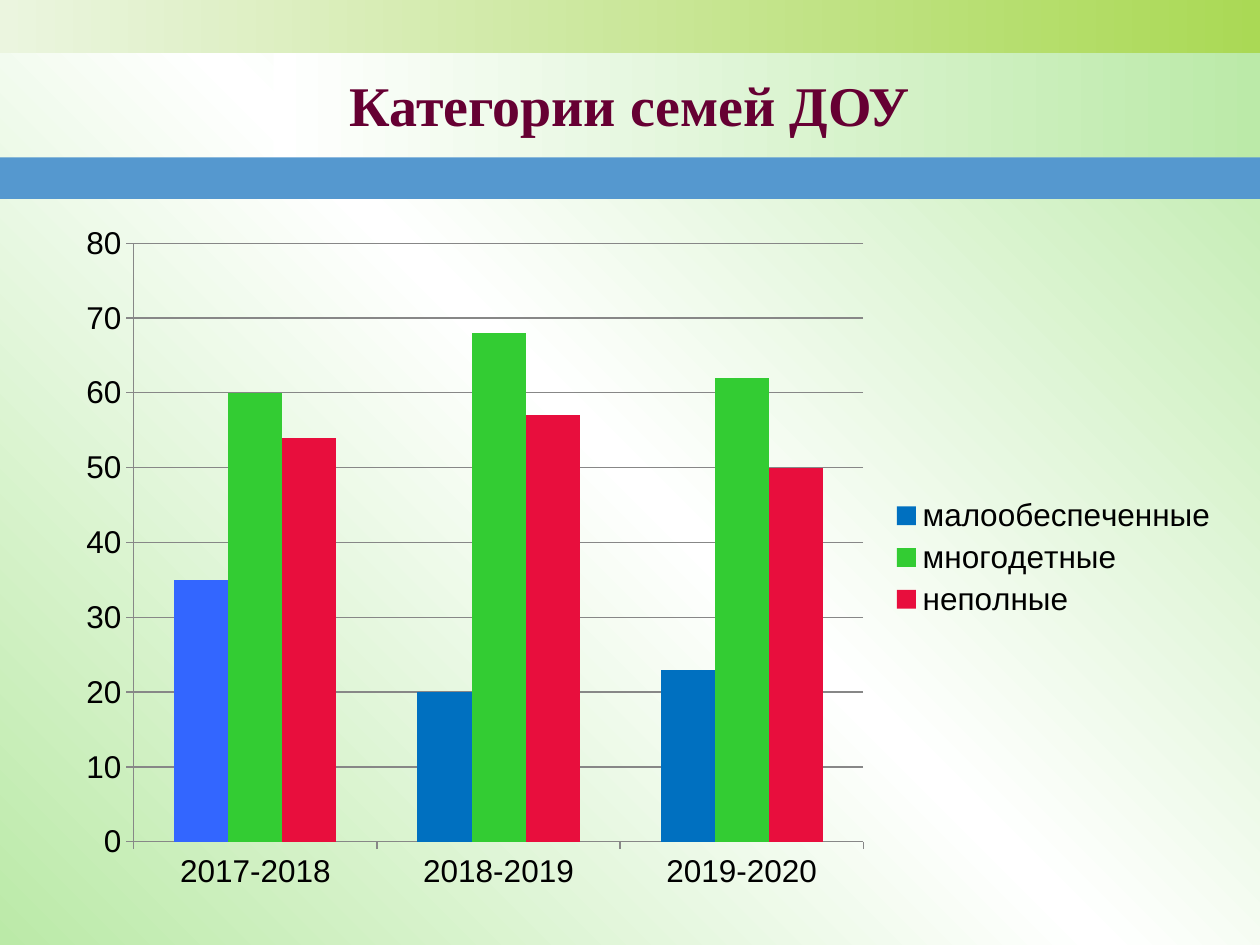
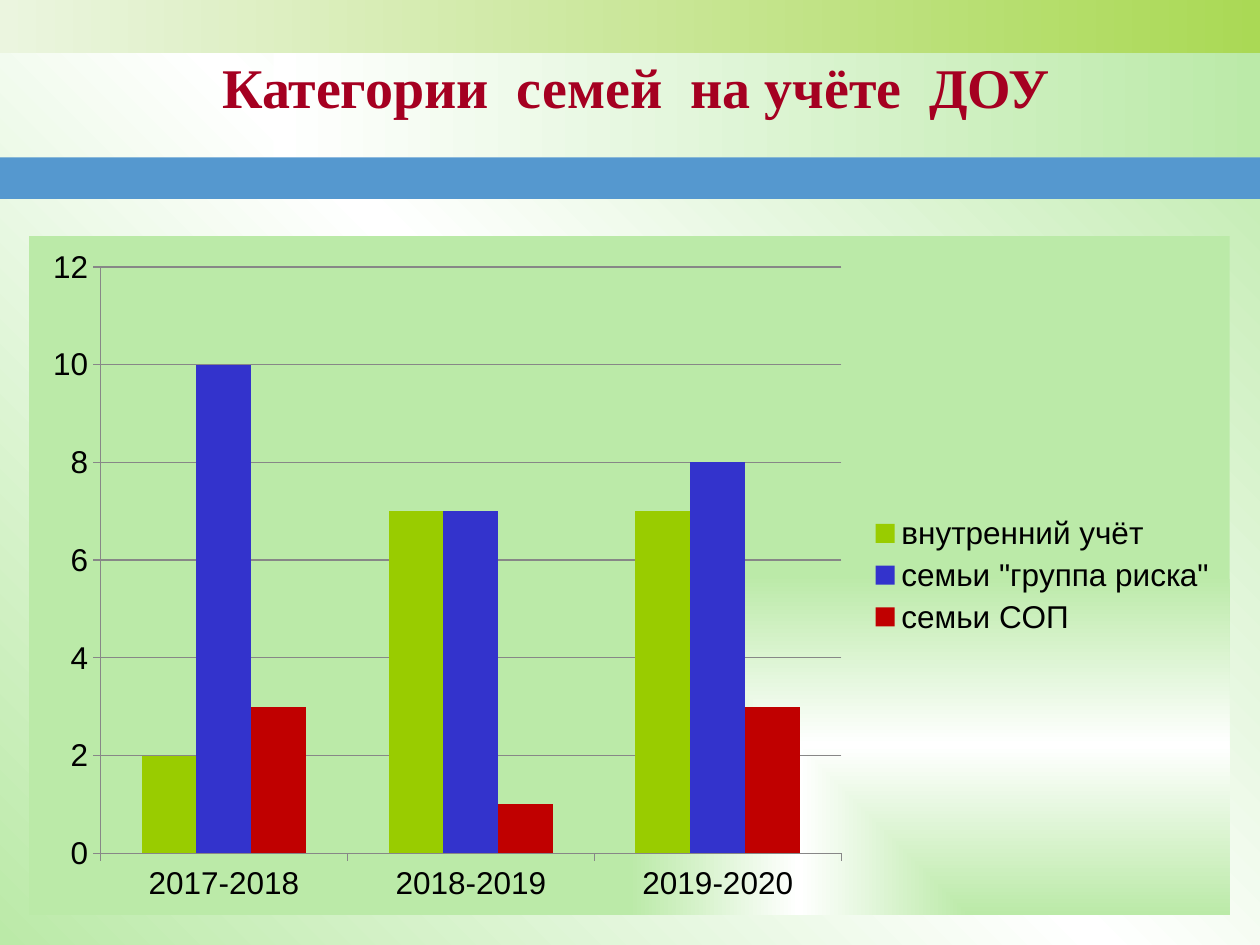
from pptx import Presentation
from pptx.chart.data import CategoryChartData
from pptx.dml.color import RGBColor
from pptx.enum.chart import XL_CHART_TYPE, XL_LEGEND_POSITION, XL_TICK_MARK
from pptx.enum.shapes import MSO_SHAPE
from pptx.enum.text import MSO_ANCHOR, PP_ALIGN
from pptx.oxml import parse_xml
from pptx.oxml.ns import nsdecls, qn
from pptx.util import Inches, Pt

COLUMNS = XL_CHART_TYPE.COLUMN_CLUSTERED
RIGHT = XL_LEGEND_POSITION.RIGHT
OUTSIDE = XL_TICK_MARK.OUTSIDE
RECT = MSO_SHAPE.RECTANGLE
MIDDLE = MSO_ANCHOR.MIDDLE
CENTER = PP_ALIGN.CENTER

WIDTH, HEIGHT = 10, 7.5
GREEN, WHITE, BLUE, GREY, BLACK = "BBEAA8", "FFFFFF", "5598CF", "878787", "000000"
SHEEN = (GREEN, WHITE, GREEN)
CORNER = '<a:path path="rect"><a:fillToRect l="100000" t="100000"/></a:path>'
YEARS = ("2017-2018", "2018-2019", "2019-2020")

BANDS = (
    ((0, 0, WIDTH, 0.42), ("EBF5DF", "AAD955")),
    ((2.17, 0.42, 7.83, 0.83), (WHITE, GREEN)),
    ((0, 1.25, WIDTH, 0.33), (BLUE,)),
)

SLIDES = (
    dict(
        title="Категории семей ДОУ", title_color="660033",
        title_box=(0.5, 0.42, 9, 0.82), chart_box=(0.5, 1.68, 9.27, 5.49),
        series=(
            ("малообеспеченные", (35, 20, 23), "0070C0"),
            ("многодетные", (60, 68, 62), "33CC33"),
            ("неполные", (54, 57, 50), "E80E3D"),
        ),
        panel="<a:noFill/>", first_bar="3366FF",
    ),
    dict(
        title="Категории  семей  на учёте  ДОУ", title_color="A50021",
        title_box=(0.55, 0.39, 9, 0.58), chart_box=(0.23, 1.87, 9.53, 5.39),
        series=(
            ("внутренний учёт", (2, 7, 7), "99CC00"),
            ('семьи "группа риска"', (7 + 3, 7, 8), "3333CC"),
            ("семьи СОП", (3, 1, 3), "C00000"),
        ),
        panel=None, first_bar=None,
    ),
)


def rgb(color):
    """Turn a hex string into a colour."""
    return RGBColor.from_string(color)


def inches(box):
    """Turn a box in inches into lengths."""
    return [Inches(v) for v in box]


def linear(angle):
    """Return the direction of a linear gradient, clockwise in degrees."""
    return f'<a:lin ang="{angle * 60000}" scaled="0"/>'


def gradient(colors, direction):
    """Return gradient fill XML with evenly spaced stops."""
    step = 100000 // (len(colors) - 1)
    stops = "".join(f'<a:gs pos="{i * step}"><a:srgbClr val="{c}"/></a:gs>'
                    for i, c in enumerate(colors))
    return (f'<a:gradFill {nsdecls("a")} rotWithShape="1">'
            f'<a:gsLst>{stops}</a:gsLst>{direction}</a:gradFill>')


def paint(fill, parent, colors, angle=0):
    """Fill with one colour, or with a linear gradient of several."""
    fill.solid()
    fill.fore_color.rgb = rgb(colors[0])
    if len(colors) > 1:
        parent.replace(parent.find(qn("a:solidFill")),
                       parse_xml(gradient(colors, linear(angle))))


def add_backdrop(s):
    """Paint the background and the bands that every slide shares."""
    fill = s.background.fill
    fill.solid()
    paint(fill, s.element.find(".//" + qn("p:bgPr")), SHEEN, 315)
    for box, colors in BANDS:
        sp = s.shapes.add_shape(RECT, *inches(box))
        sp.shadow.inherit = False
        sp.line.fill.background()
        paint(sp.fill, sp.element.spPr, colors)


def add_title(s, box, text, color):
    """Write the centred slide title in its box."""
    tf = s.shapes.add_textbox(*inches(box)).text_frame
    tf.word_wrap = True
    tf.vertical_anchor = MIDDLE
    p = tf.paragraphs[0]
    p.alignment = CENTER
    r = p.add_run()
    r.text = text
    r.font.name = "Times New Roman"
    r.font.size = Pt(32)
    r.font.bold = True
    r.font.color.rgb = rgb(color)


def style_line(line):
    """Draw an axis or grid line in thin grey."""
    line.color.rgb = rgb(GREY)
    line.width = Pt(0.75)


def add_family_chart(s, box, series, panel, first_bar):
    """Place the column chart of family categories by school year."""
    data = CategoryChartData()
    data.categories = YEARS
    for name, values, _ in series:
        data.add_series(name, values)
    chart = s.shapes.add_chart(COLUMNS, *inches(box), data).chart
    chart.has_title = False
    chart.font.name = "Arial"
    chart.font.size = Pt(18)
    chart.font.color.rgb = rgb(BLACK)
    chart.has_legend = True
    chart.legend.position = RIGHT
    chart.legend.include_in_layout = False

    for axis in (chart.category_axis, chart.value_axis):
        axis.major_tick_mark = OUTSIDE
        style_line(axis.format.line)
    chart.value_axis.has_major_gridlines = True
    style_line(chart.value_axis.major_gridlines.format.line)

    plot = chart.plots[0]
    plot.vary_by_categories = False
    plot.gap_width = 150
    for bars, (_, _, color) in zip(plot.series, series):
        bars.invert_if_negative = False
        paint(bars.format.fill, None, (color,))
    if first_bar:
        paint(plot.series[0].points[0].format.fill, None, (first_bar,))

    fill = panel or gradient(SHEEN, CORNER)
    chart.element.find(qn("c:chart")).addnext(parse_xml(
        f'<c:spPr {nsdecls("c", "a")}>{fill}<a:ln><a:noFill/></a:ln></c:spPr>'))


def add_chart_slide(prs, title, title_color, title_box, chart_box, **chart):
    """Build one slide with a title over a chart."""
    s = prs.slides.add_slide(prs.slide_layouts[6])
    add_backdrop(s)
    add_title(s, title_box, title, title_color)
    add_family_chart(s, chart_box, **chart)


def main():
    """Build and save the presentation."""
    prs = Presentation()
    prs.slide_width, prs.slide_height = Inches(WIDTH), Inches(HEIGHT)
    for content in SLIDES:
        add_chart_slide(prs, **content)
    prs.save("out.pptx")


if __name__ == "__main__":
    main()
